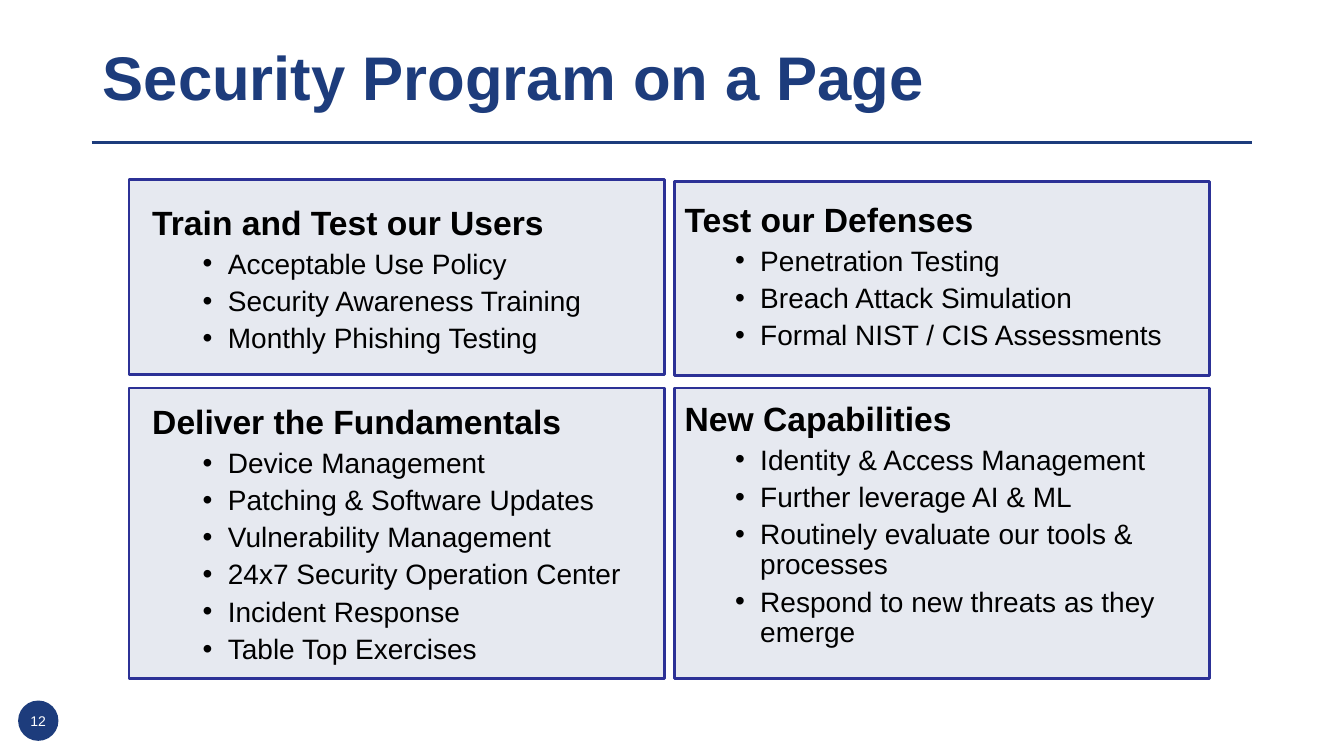
"""Build the one-page security program slide."""
from dataclasses import dataclass

from lxml.etree import SubElement
from pptx import Presentation
from pptx.dml.color import RGBColor
from pptx.enum.shapes import MSO_CONNECTOR, MSO_SHAPE
from pptx.enum.text import MSO_ANCHOR, MSO_AUTO_SIZE, PP_ALIGN
from pptx.oxml.ns import qn
from pptx.util import Emu, Pt

EMU_PER_PX = 9144
NAVY, BORDER, BLACK, WHITE = "1D3C7C", "2C3196", "000000", "FFFFFF"
FONT = "Arial"
SECTION_GAP = 36.5


@dataclass(frozen=True)
class Frame:
    left: int
    top: int
    width: int
    height: int


@dataclass(frozen=True)
class Topic:
    heading: str
    items: tuple[str, ...]


@dataclass(frozen=True)
class Column:
    frame: Frame
    topics: tuple[Topic, ...]


PANELS = (
    Frame(128, 178, 531, 194),
    Frame(128, 385, 531, 288),
    Frame(669, 385, 531, 288),
    Frame(669, 180, 531, 193),
)
COLUMNS = (
    Column(Frame(141, 200, 559, 476), (
        Topic("Train and Test our Users", (
            "Acceptable Use Policy",
            "Security Awareness Training",
            "Monthly Phishing Testing")),
        Topic("Deliver the Fundamentals", (
            "Device Management",
            "Patching & Software Updates",
            "Vulnerability Management",
            "24x7 Security Operation Center",
            "Incident Response",
            "Table Top Exercises")))),
    Column(Frame(669, 197, 550, 476), (
        Topic("Test our Defenses", (
            "Penetration Testing",
            "Breach Attack Simulation",
            "Formal NIST / CIS Assessments")),
        Topic("New Capabilities", (
            "Identity & Access Management",
            "Further leverage AI & ML",
            "Routinely evaluate our tools & processes",
            "Respond to new threats as they emerge")))),
)


def px(length: int) -> Emu:
    """Turn px into EMU."""
    return Emu(length * EMU_PER_PX)


def color(value: str) -> RGBColor:
    """Turn a hex string into a colour."""
    return RGBColor.from_string(value)


def place(shape, frame: Frame) -> None:
    """Move and size a shape."""
    shape.left, shape.top = px(frame.left), px(frame.top)
    shape.width, shape.height = px(frame.width), px(frame.height)


def add_span(para, text: str, size: int, ink: str, bold: bool = False) -> None:
    """Add one formatted run."""
    span = para.add_run()
    span.text = text
    span.font.name, span.font.size, span.font.bold = FONT, Pt(size), bold
    span.font.color.rgb = color(ink)


def add_solid(page, kind: MSO_SHAPE, frame: Frame, fill: str):
    """Add a filled preset shape without a shadow."""
    shape = page.shapes.add_shape(kind, 0, 0, 0, 0)
    place(shape, frame)
    shape.shadow.inherit = False
    shape.fill.solid()
    shape.fill.fore_color.rgb = color(fill)
    return shape


def add_panel(page, frame: Frame) -> None:
    """Add a translucent outlined panel."""
    panel = add_solid(page, MSO_SHAPE.RECTANGLE, frame, NAVY)
    tint = panel.fill._xPr.find(f".//{qn('a:srgbClr')}")
    SubElement(tint, qn("a:alpha"), val="11000")
    panel.line.color.rgb = color(BORDER)
    panel.line.width = Pt(2)


def add_badge(page, frame: Frame, number: str) -> None:
    """Add the round page number."""
    badge = add_solid(page, MSO_SHAPE.OVAL, frame, NAVY)
    badge.line.fill.background()
    box = badge.text_frame
    box.margin_left = box.margin_right = 0
    box.vertical_anchor = MSO_ANCHOR.MIDDLE
    box.paragraphs[0].alignment = PP_ALIGN.CENTER
    add_span(box.paragraphs[0], number, 10, WHITE)


def add_rule(page, left: int, right: int, top: int) -> None:
    """Add the line under the title."""
    rule = page.shapes.add_connector(
        MSO_CONNECTOR.STRAIGHT, px(left), px(top), px(right), px(top))
    rule.line.color.rgb = color(NAVY)
    rule.line.width = Pt(2)
    SubElement(rule._element.spPr, qn("a:effectLst"))


def fill_title(title, text: str, frame: Frame) -> None:
    """Place and format the title."""
    place(title, frame)
    box = title.text_frame
    box.auto_size = MSO_AUTO_SIZE.NONE
    box.vertical_anchor = MSO_ANCHOR.BOTTOM
    box.margin_bottom = 0
    para = box.paragraphs[0]
    para.alignment, para.line_spacing = PP_ALIGN.LEFT, 0.9
    add_span(para, text, 44, NAVY, bold=True)


def format_para(para, before: float, margin: int, indent: int):
    """Set paragraph spacing and indents, and return its properties."""
    para.line_spacing, para.space_before = 0.9, Pt(before)
    properties = para._p.get_or_add_pPr()
    properties.set("marL", str(px(margin)))
    properties.set("indent", str(px(indent)))
    return properties


def fill_column(page, holder, column: Column) -> None:
    """Write a column of topics in front of the panels."""
    page.shapes._spTree.append(holder._element)
    place(holder, column.frame)
    box = holder.text_frame
    box.auto_size = MSO_AUTO_SIZE.NONE
    for index, topic in enumerate(column.topics):
        para = box.add_paragraph() if index else box.paragraphs[0]
        properties = format_para(para, SECTION_GAP if index else 10, 0, 0)
        SubElement(properties, qn("a:buNone"))
        add_span(para, topic.heading, 24, BLACK, bold=True)
        for item in topic.items:
            para = box.add_paragraph()
            para.level = 1
            properties = format_para(para, 5, 75, -25)
            SubElement(properties, qn("a:buFont"), typeface=FONT)
            SubElement(properties, qn("a:buChar"), char="•")
            add_span(para, item, 20, BLACK)


def main() -> None:
    """Build and save the deck."""
    deck = Presentation()
    deck.slide_width, deck.slide_height = px(1333), px(750)
    page = deck.slides.add_slide(deck.slide_layouts.get_by_name("Two Content"))
    title, *holders = page.placeholders
    add_badge(page, Frame(18, 695, 40, 40), "12")
    add_rule(page, 91, 1242, 141)
    fill_title(title, "Security Program on a Page", Frame(92, 15, 1058, 98))
    for frame in PANELS:
        add_panel(page, frame)
    for holder, column in zip(holders, COLUMNS):
        fill_column(page, holder, column)
    deck.save("out.pptx")


if __name__ == "__main__":
    main()
